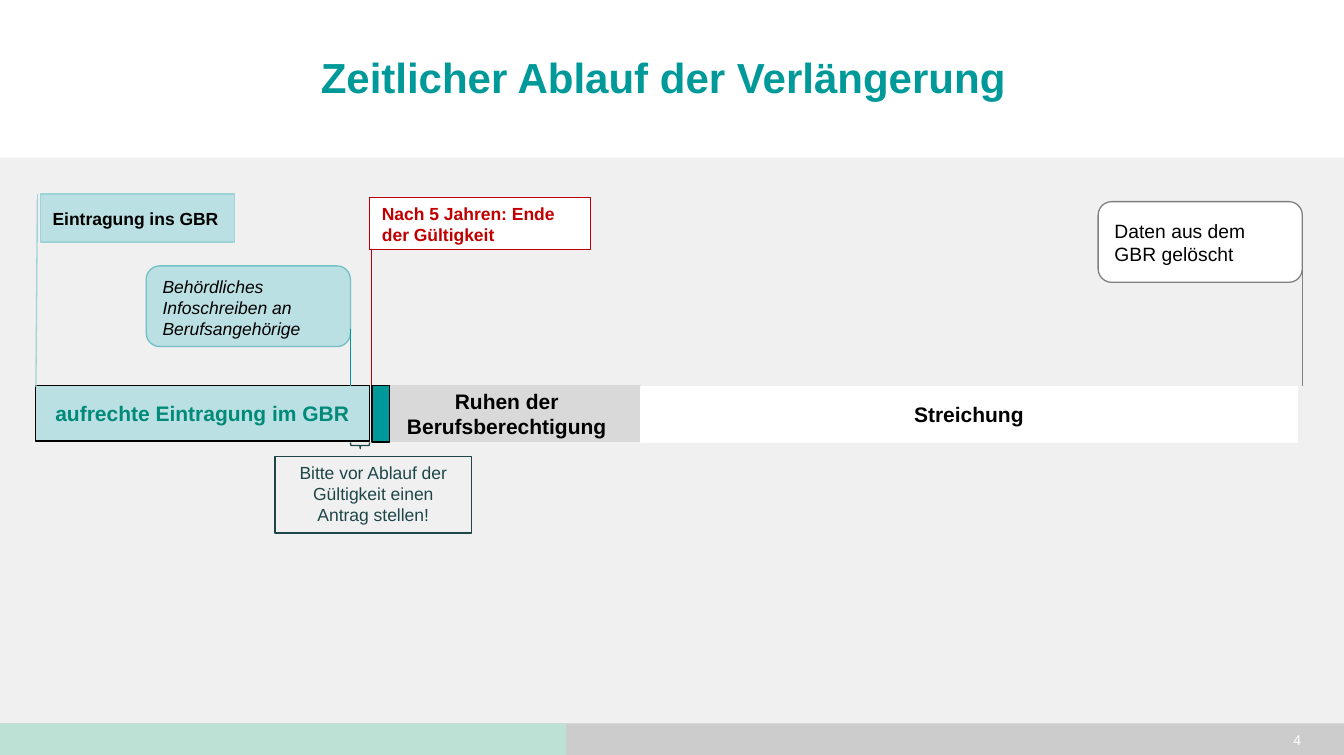
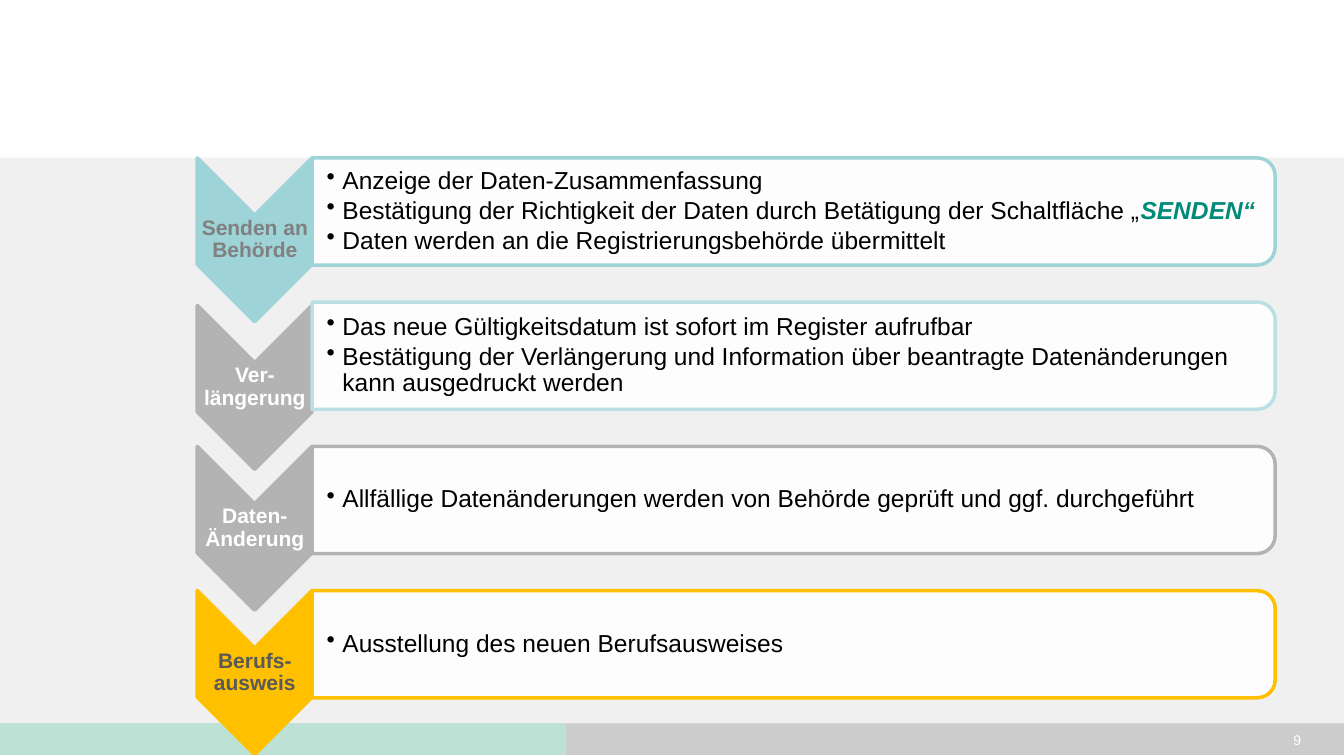
import lxml.etree
import pptx
import pptx.dml.color
import pptx.enum.shapes
import pptx.enum.text
import pptx.oxml.ns
import pptx.util

# Colours
BLACK = pptx.dml.color.RGBColor(0x00, 0x00, 0x00)
WHITE = pptx.dml.color.RGBColor(0xFF, 0xFF, 0xFF)
TEAL = pptx.dml.color.RGBColor(0x00, 0x99, 0x99)
GREEN = pptx.dml.color.RGBColor(0x00, 0x8A, 0x79)
PALE = pptx.dml.color.RGBColor(0xBB, 0xE0, 0xE3)
AQUA = pptx.dml.color.RGBColor(0x9E, 0xD3, 0xD7)
SEA = pptx.dml.color.RGBColor(0x72, 0xBF, 0xC5)
DEEP = pptx.dml.color.RGBColor(0x1E, 0x46, 0x49)
MINT = pptx.dml.color.RGBColor(0xBE, 0xE1, 0xD6)
RED = pptx.dml.color.RGBColor(0xC0, 0x00, 0x00)
GOLD = pptx.dml.color.RGBColor(0xFF, 0xC0, 0x00)
DARK = pptx.dml.color.RGBColor(0x59, 0x59, 0x59)
GREY = pptx.dml.color.RGBColor(0x80, 0x80, 0x80)
SILVER = pptx.dml.color.RGBColor(0xB3, 0xB3, 0xB3)
ASH = pptx.dml.color.RGBColor(0xCC, 0xCC, 0xCC)
CLOUD = pptx.dml.color.RGBColor(0xD9, 0xD9, 0xD9)

# Sizes and shared names
WIDE, HIGH = 767.52, 431.28
FOOT = 413.3
SHAPE = pptx.enum.shapes.MSO_SHAPE
LEFT = pptx.enum.text.PP_ALIGN.LEFT
MID = pptx.enum.text.PP_ALIGN.CENTER
RIGHT = pptx.enum.text.PP_ALIGN.RIGHT
TOP = pptx.enum.text.MSO_ANCHOR.TOP
CENTER = pptx.enum.text.MSO_ANCHOR.MIDDLE


def pts(*nums):
    return [pptx.util.Pt(num) for num in nums]


def put(item, vals):
    """Set each format value on the item."""
    for name, val in vals.items():
        setattr(item, name, val)


def sub(node, tag, **attrs):
    return lxml.etree.SubElement(node, pptx.oxml.ns.qn(tag), **attrs)


def write(shape, paras, size, color, align=MID, anchor=CENTER,
          inset=None, para=None, bullet=False, **font):
    """Fill a shape with paragraphs; each is a list of (text, format)."""
    frame = shape.text_frame
    put(frame, {"word_wrap": True, "vertical_anchor": anchor})
    if inset:
        sides = ("margin_left", "margin_top", "margin_right", "margin_bottom")
        put(frame, dict(zip(sides, pts(*inset))))
    for num, parts in enumerate(paras):
        line = frame.add_paragraph() if num else frame.paragraphs[0]
        if bullet:
            props = line._p.get_or_add_pPr()
            props.set("marL", str(pptx.util.Pt(9)))
            props.set("indent", str(pptx.util.Pt(-9)))
            sub(props, "a:buChar", char="•")
        put(line, {"alignment": align, **(para or {})})
        for text, extra in parts:
            run = line.add_run()
            run.text = text
            form = {"name": "Arial", "size": pptx.util.Pt(size),
                    "color": color, **font, **extra}
            run.font.color.rgb = form.pop("color")
            put(run.font, form)


def plain(*texts):
    return [[(text, {})] for text in texts]


def draw(slide, kind, area, fill=None, line=None, width=0.75,
         alpha=None, turn=0, adjust=()):
    shape = slide.shapes.add_shape(kind, *pts(*area))
    put(shape, {"rotation": turn})
    shape.shadow.inherit = False
    if fill is None:
        shape.fill.background()
    else:
        shape.fill.solid()
        shape.fill.fore_color.rgb = fill
    if alpha:
        tint = shape._element.spPr.find(".//" + pptx.oxml.ns.qn("a:srgbClr"))
        sub(tint, "a:alpha", val=str(alpha * 1000))
    if line is None:
        shape.line.fill.background()
    else:
        shape.line.color.rgb = line
        shape.line.width = pptx.util.Pt(width)
    for num, val in enumerate(adjust):
        shape.adjustments[num] = val
    return shape


def label(slide, area, paras, size, color, **form):
    box = slide.shapes.add_textbox(*pts(*area))
    write(box, paras, size, color, **form)


def rule(slide, x, top, end, color):
    kind = pptx.enum.shapes.MSO_CONNECTOR.STRAIGHT
    line = slide.shapes.add_connector(kind, *pts(x, top, x, end))
    line.line.color.rgb = color
    line.line.width = pptx.util.Pt(0.75)
    sub(line._element.spPr, "a:effectLst")


def bands(deck, slide):
    """Draw the grey body and footer bands, then move them to the master."""
    tree = deck.slide_master.shapes._spTree
    body = (0, 90, WIDE, HIGH - 90)
    for num, (area, fill, alpha) in enumerate((
            (body, BLACK, 6),
            ((0, FOOT, WIDE, HIGH - FOOT), ASH, None),
            ((0, FOOT, 323.3, HIGH - FOOT), MINT, None))):
        shape = draw(slide, SHAPE.RECTANGLE, area, fill, alpha=alpha)
        tree.insert(2 + num, shape._element)


def number(slide, text):
    label(slide, (714.2, 414, 36, 17.3), plain(text), 8, WHITE, align=RIGHT)


def heading(slide, text):
    title = slide.shapes.title
    put(title, dict(zip(("left", "top", "width", "height"),
                        pts(89.3, 6.5, 579, 75))))
    write(title, plain(text), 24, TEAL, bold=True)


def phases(slide):
    # Callouts and the hint below the bar
    end = draw(slide, SHAPE.LINE_CALLOUT_1, (211, 113, 126, 29.5), WHITE, RED,
               adjust=(0.996, 0.008, 3.656, 0.008))
    write(end, plain("Nach 5 Jahren: Ende der Gültigkeit"), 10, RED,
          align=LEFT, bold=True)
    draw(slide, SHAPE.LEFT_BRACE, (203.8, 249.1, 3.6, 10.8), None, DEEP,
         turn=270, adjust=(0.083, 0.51))
    hint = draw(slide, SHAPE.RECTANGLE, (157, 260.6, 112.3, 43.9), None, DEEP)
    write(hint, plain("Bitte vor Ablauf der Gültigkeit einen Antrag stellen!"),
          10, DEEP, anchor=TOP)

    # Phases of the time bar
    for text, x, y, wide, high, fill, line, color in (
            ("Ruhen der Berufsberechtigung", 213.1, 220.3, 152.6, 31.7,
             CLOUD, CLOUD, BLACK),
            ("aufrechte Eintragung im GBR", 20.2, 220.3, 190.8, 31.7,
             PALE, BLACK, GREEN),
            ("Streichung", 365.8, 221, 375, 31.7, WHITE, WHITE, BLACK),
            ("", 212.4, 220.3, 10.1, 32.2, TEAL, BLACK, BLACK)):
        bar = draw(slide, SHAPE.FLOWCHART_PROCESS, (x, y, wide, high),
                   fill, line)
        if text:
            write(bar, plain(text), 12, color, bold=True)

    # Events above the bar
    start = draw(slide, SHAPE.LINE_CALLOUT_1_BORDER_AND_ACCENT_BAR,
                 (23, 110.9, 110.9, 27.4), PALE, AQUA,
                 adjust=(0.124, -0.015, 4.017, -0.022))
    write(start, plain("Eintragung ins GBR"), 10, BLACK, align=LEFT, bold=True)
    for text, x, y, fill, line, stem, drop, size, anchor, slant in (
            ("Daten aus dem GBR gelöscht", 627.1, 115.2, WHITE, GREY, GREY,
             150.5, 11, CENTER, False),
            ("Behördliches Infoschreiben an Berufsangehörige", 83.5, 151.9,
             PALE, SEA, TEAL, 187.9, 10, TOP, True)):
        event = draw(slide, SHAPE.FLOWCHART_ALTERNATE_PROCESS,
                     (x, y, 116.6, 46.1), fill, line)
        write(event, plain(text), size, BLACK, align=LEFT, anchor=anchor,
              italic=slant)
        rule(slide, x + 116.7, drop, 220.3, stem)


def step(slide, mid, shift, name, paras, fill, edge, color):
    """One row: chevron with its name, and a framed bullet list."""
    tip = mid + 16.2 + shift
    draw(slide, SHAPE.CHEVRON, (98.6, tip - 32.75, 93.6, 65.5), fill, fill, 2,
         turn=90)
    label(slide, (112.8, tip - 14, 65.5, 28), plain(name), 12, color,
          inset=(0.7,) * 4, para={"line_spacing": 0.9}, bold=True)
    draw(slide, SHAPE.ROUND_2_SAME_RECTANGLE, (422.6, mid - 275, 61.2, 550),
         WHITE, edge, 2, alpha=90, turn=90)
    label(slide, (178.6, mid - 27.7, 546.5, 55.4), paras, 14, BLACK,
          align=LEFT, inset=(7.9, 0.7, 0.7, 0.7), bullet=True,
          para={"line_spacing": 0.9, "space_after": pptx.util.Pt(2.1)})


def steps(slide):
    strong = {"color": GREEN, "bold": True, "italic": True}
    send = plain("Anzeige der Daten-Zusammenfassung",
                 "Bestätigung der Richtigkeit der Daten durch Betätigung "
                 "der Schaltfläche „",
                 "Daten werden an die Registrierungsbehörde übermittelt")
    send[1].append(("SENDEN“", strong))
    renew = plain("Das neue Gültigkeitsdatum ist sofort im Register aufrufbar",
                  "Bestätigung der Verlängerung und Information über "
                  "beantragte Datenänderungen kann ausgedruckt werden")
    change = plain("Allfällige Datenänderungen werden von Behörde geprüft "
                   "und ggf. durchgeführt")
    card = plain("Ausstellung des neuen Berufsausweises")
    rows = (
        (0, "Senden an Behörde", send, AQUA, AQUA, GREY),
        (1.9, "Ver-längerung", renew, SILVER, PALE, WHITE),
        (0, "Daten-Änderung", change, SILVER, SILVER, WHITE),
        (0, "Berufs-ausweis", card, GOLD, GOLD, DARK),
    )
    for num, row in enumerate(rows):
        step(slide, 120.8 + 82.4 * num, *row)


def main():
    deck = pptx.Presentation()
    put(deck, dict(zip(("slide_width", "slide_height"), pts(WIDE, HIGH))))

    # Time line
    slide = deck.slides.add_slide(deck.slide_layouts[5])
    bands(deck, slide)
    heading(slide, "Zeitlicher Ablauf der Verlängerung")
    phases(slide)
    number(slide, "4")

    # Steps
    slide = deck.slides.add_slide(deck.slide_layouts[6])
    number(slide, "9")
    steps(slide)

    deck.save("out.pptx")


if __name__ == "__main__":
    main()
